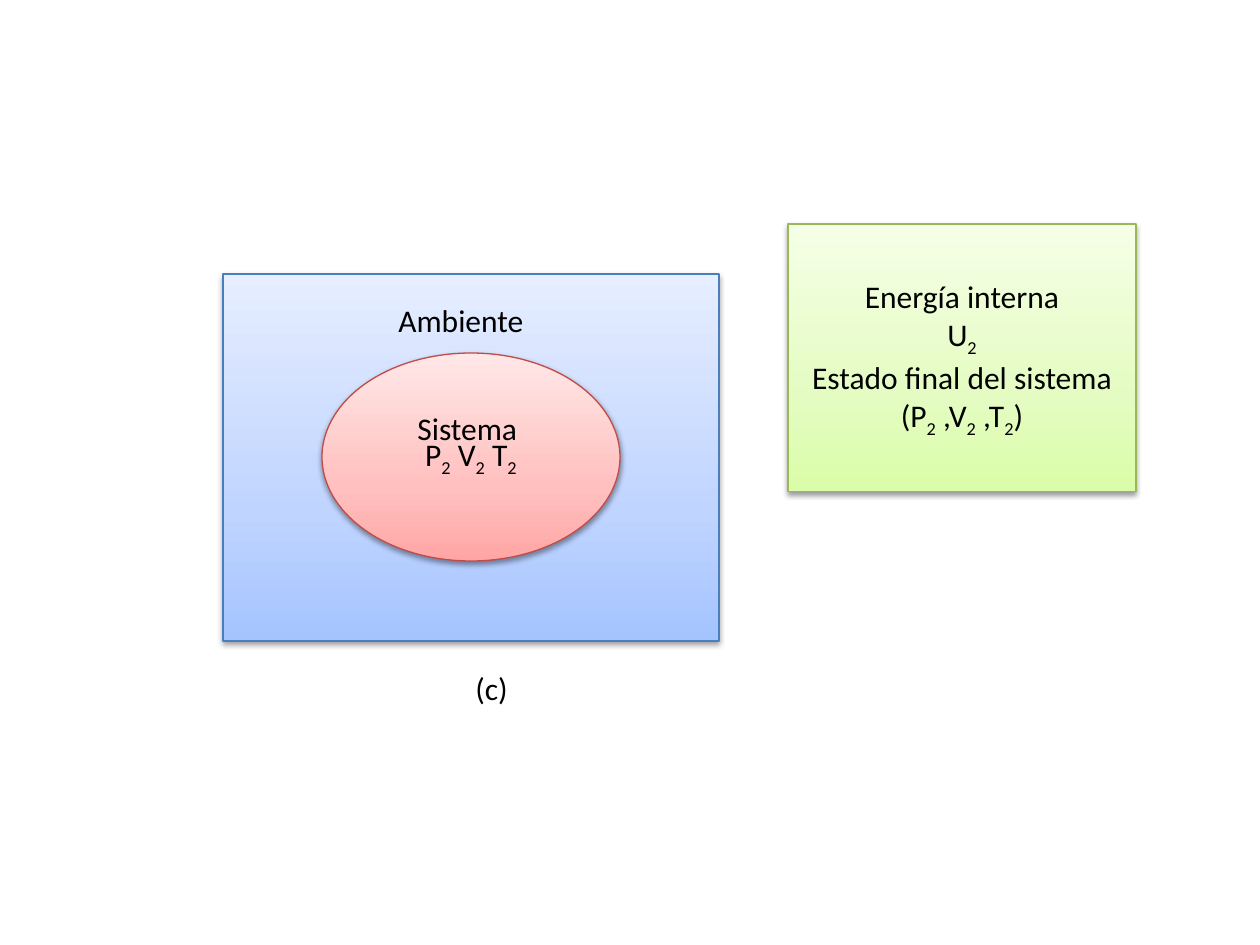
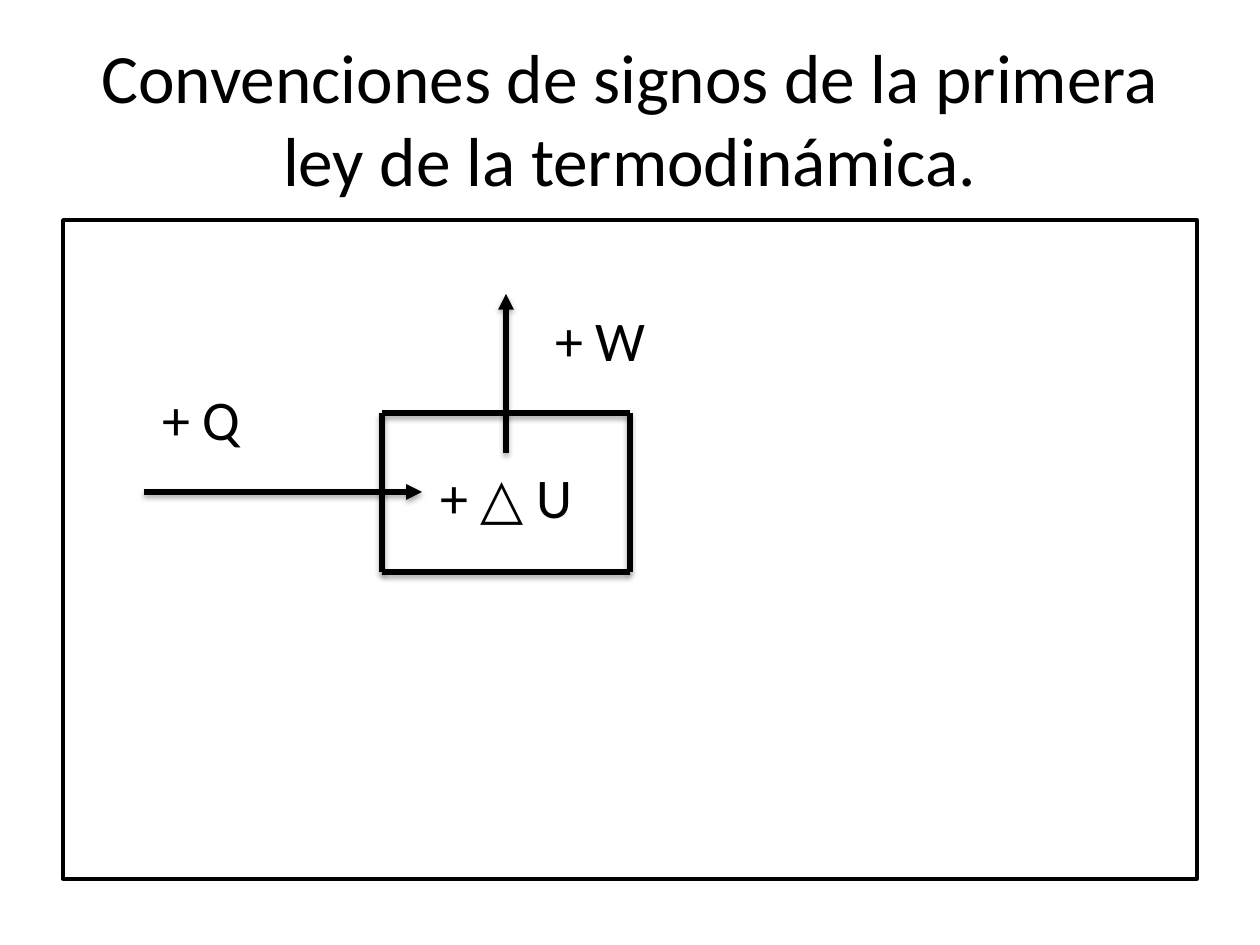
import pptx
import pptx.util
import pptx.oxml
import pptx.oxml.ns
from pptx.dml.color import RGBColor
from pptx.enum.shapes import MSO_CONNECTOR, MSO_SHAPE
from pptx.enum.text import MSO_ANCHOR, MSO_AUTO_SIZE, PP_ALIGN

PX = 7257  # EMU in one px, at 126 px to the inch
FONT = "Calibri"
BLACK = RGBColor(0x00, 0x00, 0x00)
WHITE = RGBColor(0xFF, 0xFF, 0xFF)
BLUE_LINE = RGBColor(0x4B, 0x7E, 0xBC)
RED_LINE = RGBColor(0xBF, 0x4C, 0x48)
GREEN_LINE = RGBColor(0x98, 0xB9, 0x55)
BLUES = [RGBColor(0xA4, 0xC4, 0xFF), RGBColor(0xBF, 0xD4, 0xFF), RGBColor(0xE6, 0xEE, 0xFF)]
REDS = [RGBColor(0xFF, 0xA6, 0xA5), RGBColor(0xFF, 0xC0, 0xBF), RGBColor(0xFF, 0xE7, 0xE7)]
GREENS = [RGBColor(0xDA, 0xFD, 0xA7), RGBColor(0xE4, 0xFC, 0xC2), RGBColor(0xF5, 0xFF, 0xE7)]
NS = pptx.oxml.ns.nsdecls("a")


def write(tf, text, size=18, align=PP_ALIGN.LEFT, anchor=MSO_ANCHOR.TOP, indents=(), gap=0):
    """Write one paragraph per line; a character after "_" is a subscript."""
    tf.word_wrap = True
    tf.auto_size = MSO_AUTO_SIZE.NONE
    tf.vertical_anchor = anchor
    for i, line in enumerate(text.split("\n")):
        p = tf.add_paragraph() if i else tf.paragraphs[0]
        p.alignment = align
        if indents:
            p._p.get_or_add_pPr().set("marL", str(indents[i] * PX))
        if i and gap:
            p.space_before = pptx.util.Pt(gap)
        first, *rest = line.split("_")
        runs = [(first, False)]
        for part in rest:
            runs += [(part[0], True), (part[1:], False)]
        for piece, lowered in runs:
            if piece:
                r = p.add_run()
                r.text = piece
                r.font.name, r.font.size = FONT, pptx.util.Pt(size)
                r.font.color.rgb = BLACK
                if lowered:
                    r._r.get_or_add_rPr().set("baseline", "-25000")


def cast_shadow(sp, opacity, distance):
    """Add a soft shadow straight below; call it once the line is set."""
    sp._element.spPr.append(pptx.oxml.parse_xml(
        f'<a:effectLst {NS}><a:outerShdw blurRad="{pptx.util.Pt(3.1)}" '
        f'dist="{pptx.util.Pt(distance)}" dir="5400000" rotWithShape="0">'
        f'<a:srgbClr val="{BLACK}"><a:alpha val="{opacity * 1000}"/></a:srgbClr>'
        '</a:outerShdw></a:effectLst>'))


prs = pptx.Presentation()
prs.slide_width = pptx.util.Inches(10)
prs.slide_height = pptx.util.Inches(7.5)

# Slide 1: system, surroundings and final state
s = prs.slides.add_slide(prs.slide_layouts[6])
state = "Energía interna\nU_2\nEstado final del sistema\n(P_2 ,V_2 ,T_2)"
for kind, box, stops, edge, text in [
    (MSO_SHAPE.RECTANGLE, (223, 274, 496, 367), BLUES, BLUE_LINE, ""),
    (MSO_SHAPE.OVAL, (322, 353, 298, 208), REDS, RED_LINE, "P_2 V_2 T_2"),
    (MSO_SHAPE.RECTANGLE, (788, 224, 348, 268), GREENS, GREEN_LINE, state),
]:
    sp = s.shapes.add_shape(kind, *[v * PX for v in box])
    sp.fill.gradient()
    sp.fill.gradient_angle = 90
    gs_list = sp._element.spPr.find(".//" + pptx.oxml.ns.qn("a:gsLst"))
    gs_list.clear()
    for position, color in zip((0, 35, 100), stops):
        gs_list.append(pptx.oxml.parse_xml(
            f'<a:gs {NS} pos="{position * 1000}"><a:srgbClr val="{color}"/></a:gs>'))
    sp.line.color.rgb = edge
    sp.line.width = pptx.util.Pt(0.75)
    cast_shadow(sp, 38, 1.6)
    write(sp.text_frame, text, align=PP_ALIGN.CENTER, anchor=MSO_ANCHOR.MIDDLE)

# Labels
for text, x, y in [("Sistema", 405, 403), ("Ambiente", 386, 295), ("(c)", 463, 663)]:
    sp = s.shapes.add_textbox(x * PX, y * PX, 180 * PX, 50 * PX)
    write(sp.text_frame, text)

# Slide 2: sign conventions
s = prs.slides.add_slide(prs.slide_layouts[5])
title = s.shapes.title
title.left, title.top, title.width, title.height = [v * PX for v in (63, 38, 1134, 158)]
write(title.text_frame, "Convenciones de signos de la primera ley de la termodinámica.",
      size=39.6, align=PP_ALIGN.CENTER, anchor=MSO_ANCHOR.MIDDLE)

# Framed panel with the signs
panel = s.shapes.add_shape(MSO_SHAPE.RECTANGLE, *[v * PX for v in (63, 220, 1134, 659)])
panel.shadow.inherit = False
panel.fill.solid()
panel.fill.fore_color.rgb = WHITE
panel.line.color.rgb = BLACK
panel.line.width = pptx.util.Pt(2)
panel.text_frame.margin_top = 86 * PX
write(panel.text_frame, "+ W\n+ Q\n+ △ U", size=32, indents=(480, 87, 365), gap=6.4)

# System box sides, then the heat and work arrows
left, top, right, bottom = 382, 413, 630, 572
for x1, y1, x2, y2, arrow in [
    (left, top, right, top, False),
    (left, top, left, bottom, False),
    (right, top, right, bottom, False),
    (left, bottom, right, bottom, False),
    (144, 492, 422, 492, True),
    (506, 453, 506, 294, True),
]:
    c = s.shapes.add_connector(MSO_CONNECTOR.STRAIGHT, x1 * PX, y1 * PX, x2 * PX, y2 * PX)
    c.line.color.rgb = BLACK
    c.line.width = pptx.util.Pt(3)
    if arrow:
        c.line._get_or_add_ln().append(pptx.oxml.parse_xml(f'<a:tailEnd {NS} type="triangle"/>'))
    cast_shadow(c, 35, 1.8)

prs.save("out.pptx")
